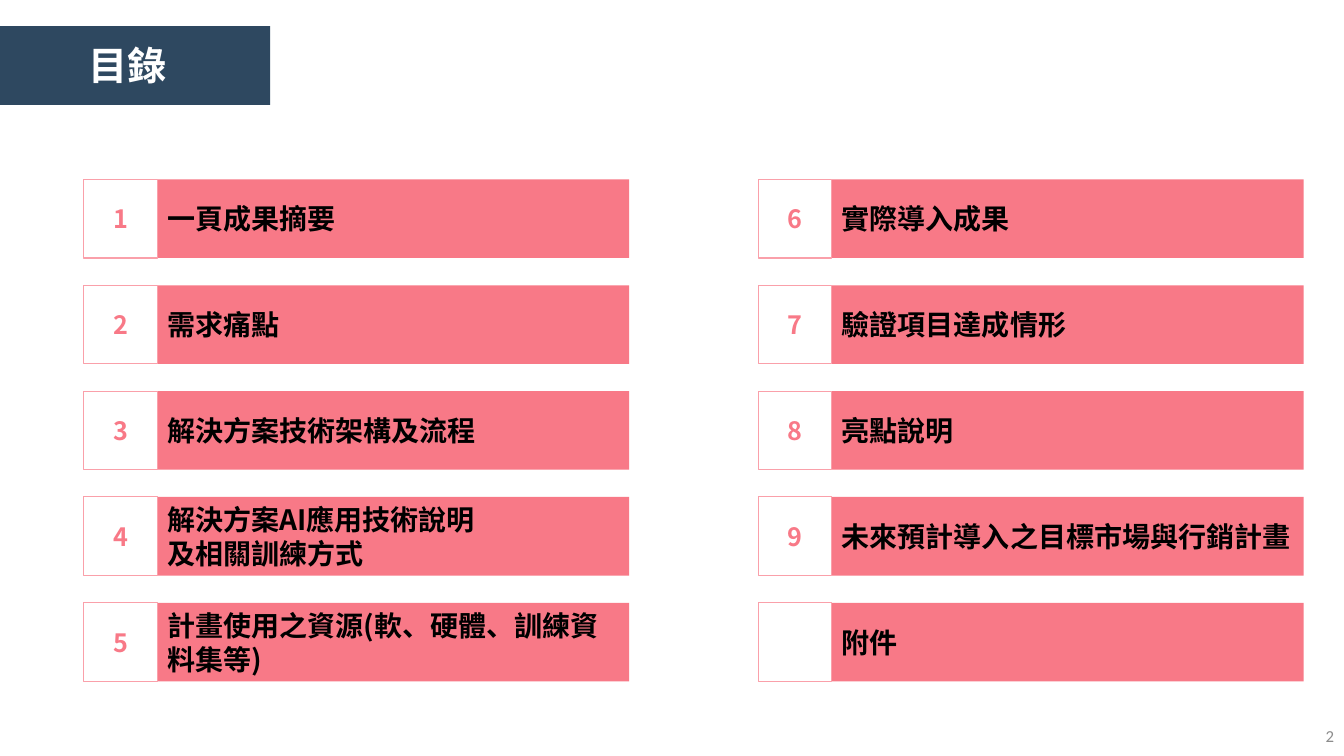
import pptx
import pptx.util
import pptx.dml.color
import pptx.enum.shapes
import pptx.enum.text
import pptx.oxml.ns
import lxml.etree

Inches = pptx.util.Inches
RGBColor = pptx.dml.color.RGBColor
ALIGN = pptx.enum.text.PP_ALIGN

TITLE = "目錄"
PAGE = "2"
COLUMNS = [
    [
        ("1", ["一頁成果摘要"]),
        ("2", ["需求痛點"]),
        ("3", ["解決方案技術架構及流程"]),
        ("4", ["解決方案AI應用技術說明", "及相關訓練方式"]),
        ("5", ["計畫使用之資源(軟、硬體、訓練資料集等)"]),
    ],
    [
        ("6", ["實際導入成果"]),
        ("7", ["驗證項目達成情形"]),
        ("8", ["亮點說明"]),
        ("9", ["未來預計導入之目標市場與行銷計畫"]),
        ("", ["附件"]),
    ],
]

NAVY = RGBColor(0x2E, 0x48, 0x60)
PINK = RGBColor(0xF8, 0x79, 0x87)
PALE_PINK = RGBColor(0xFA, 0xA0, 0xAA)
WHITE = RGBColor(0xFF, 0xFF, 0xFF)
BLACK = RGBColor(0, 0, 0)
GREY = RGBColor(0x8C, 0x8C, 0x8C)
CJK = "Noto Sans CJK SC"

SLIDE_W, SLIDE_H = 13.33, 7.5
GRID_LEFT, GRID_TOP = 0.83, 1.78
COLUMN_PITCH, ROW_PITCH = 6.69, 1.05
NUMBER_W, BAR_W, ROW_H = 0.73, 4.68, 0.78
DIGIT_W, DIGIT_H = 0.37, 0.4


def write(sp, lines, size, color, font=CJK, bold=True, align=ALIGN.LEFT, wrap=True):
    tf = sp.text_frame
    tf.word_wrap = wrap
    tf.vertical_anchor = pptx.enum.text.MSO_ANCHOR.MIDDLE
    for i, line in enumerate(lines):
        p = tf.add_paragraph() if i else tf.paragraphs[0]
        p.alignment = align
        r = p.add_run()
        r.text = line
        r.font.size = pptx.util.Pt(size)
        r.font.bold = bold
        r.font.color.rgb = color
        r.font.name = font
        # East Asian glyphs take their typeface from a:ea
        ea = lxml.etree.SubElement(r.font._element, pptx.oxml.ns.qn("a:ea"))
        ea.set("typeface", font)


def add_box(shapes, x, y, w, h, fill=None, line=None):
    sp = shapes.add_shape(pptx.enum.shapes.MSO_SHAPE.RECTANGLE,
                          Inches(x), Inches(y), Inches(w), Inches(h))
    sp.shadow.inherit = False
    if fill is None:
        sp.fill.background()
    else:
        sp.fill.solid()
        sp.fill.fore_color.rgb = fill
    if line is None:
        sp.line.fill.background()
    else:
        sp.line.color.rgb = line
        sp.line.width = pptx.util.Pt(0.75)
    return sp


def add_text(shapes, x, y, w, h, text, **style):
    sp = shapes.add_textbox(Inches(x), Inches(y), Inches(w), Inches(h))
    write(sp, [text], **style)


def add_entry(slide, x, y, number, lines):
    """Group a filled bar with the outlined number cell at its left."""
    shapes = slide.shapes.add_group_shape().shapes
    bar = add_box(shapes, x + NUMBER_W, y, BAR_W, ROW_H, fill=PINK)
    write(bar, lines, size=20, color=BLACK)
    if number:
        add_text(shapes, x + (NUMBER_W - DIGIT_W) / 2, y + (ROW_H - DIGIT_H) / 2,
                 DIGIT_W, DIGIT_H, number, size=18, color=PINK,
                 align=ALIGN.CENTER, wrap=False)
    add_box(shapes, x, y, NUMBER_W, ROW_H, line=PALE_PINK)


def main():
    prs = pptx.Presentation()
    prs.slide_width, prs.slide_height = Inches(SLIDE_W), Inches(SLIDE_H)
    slide = prs.slides.add_slide(prs.slide_layouts[6])

    add_box(slide.shapes, 0, 0.26, 2.68, ROW_H, fill=NAVY)
    add_text(slide.shapes, 0.78, 0.36, 3.12, 0.57, TITLE, size=28, color=WHITE)

    for col, entries in enumerate(COLUMNS):
        for row, (number, lines) in enumerate(entries):
            add_entry(slide, GRID_LEFT + col * COLUMN_PITCH,
                      GRID_TOP + row * ROW_PITCH, number, lines)

    add_text(slide.shapes, SLIDE_W - 3, SLIDE_H - 0.4, 3, 0.4, PAGE, size=12,
             color=GREY, font="Calibri", bold=False, align=ALIGN.RIGHT)
    prs.save("out.pptx")


if __name__ == "__main__":
    main()
